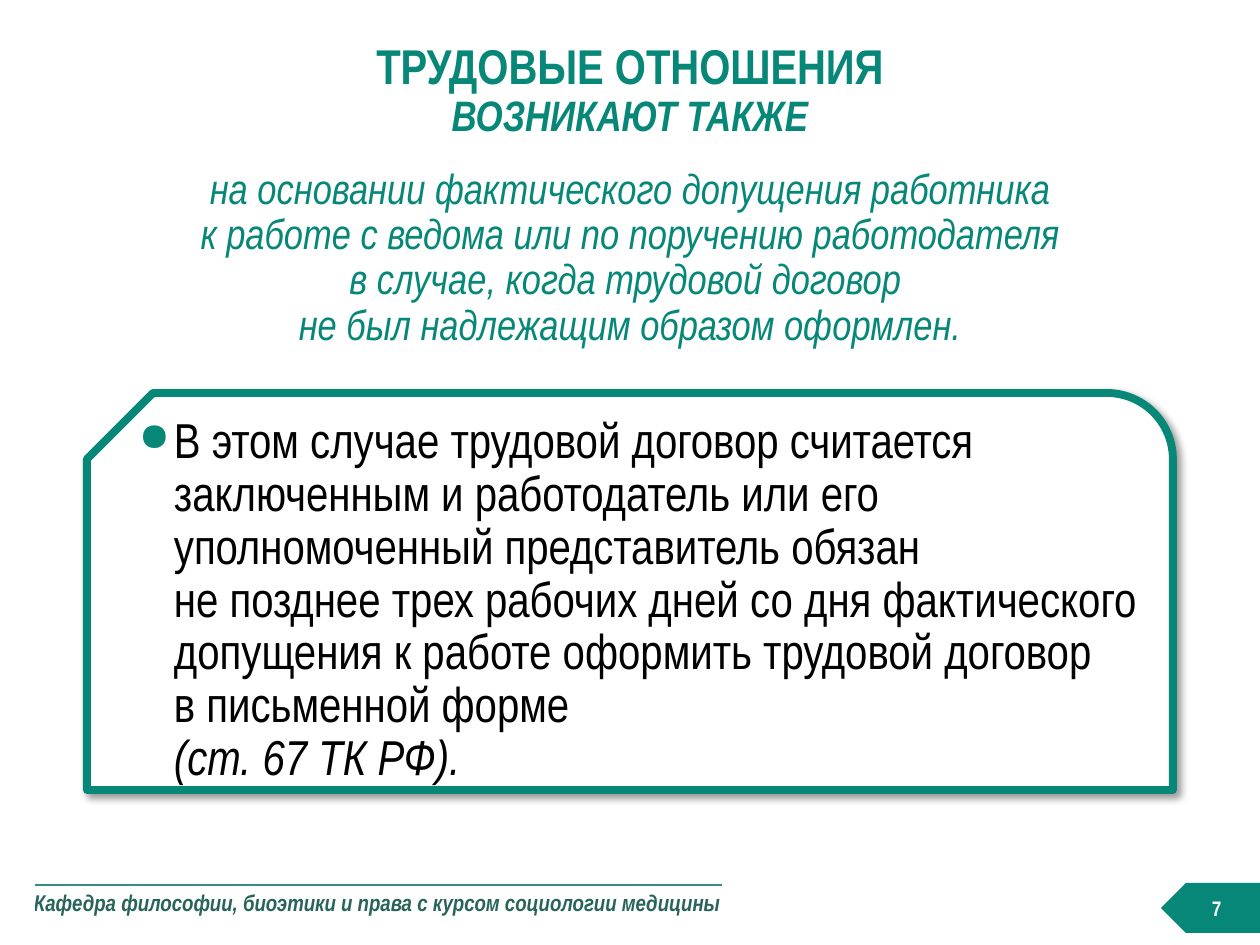
from copy import deepcopy
from dataclasses import dataclass
from typing import Optional

from lxml.etree import SubElement
from pptx import Presentation
from pptx.dml.color import RGBColor
from pptx.enum.shapes import MSO_SHAPE as Shape
from pptx.enum.text import MSO_ANCHOR as Anchor, MSO_AUTO_SIZE as AutoSize, PP_ALIGN as Align
from pptx.oxml.ns import qn
from pptx.util import Emu, Pt

FONT = "Arial Narrow"
TEAL = "078777"
WHITE = "FFFFFF"
BLACK = "000000"

Box = tuple[int, int, int, int]


@dataclass
class TextStyle:
    size: float
    color: str
    bold: bool = False
    italic: bool = False
    align: Align = Align.CENTER
    spacing: Optional[float] = 0.9


@dataclass
class Panel:
    kind: Shape
    box: Box
    text: str
    style: TextStyle
    insets: Box
    fill: str = WHITE
    anchor: Anchor = Anchor.MIDDLE
    flipped: bool = False
    outline: Optional[float] = None
    alpha: Optional[int] = None


def px(n: int) -> Emu:
    return Emu(round(n * 914400 / 126))


def rgb(value: str) -> RGBColor:
    return RGBColor.from_string(value)


def set_insets(target, insets: Box) -> None:
    sides = ("left", "top", "right", "bottom")
    for side, n in zip(sides, insets):
        setattr(target, f"margin_{side}", px(n))


def write(p, text: str, style: TextStyle) -> None:
    p.text = text
    p.alignment = style.align
    if style.spacing:
        p.line_spacing = style.spacing
    for r in p.runs:
        r.font.name = FONT
        r.font.size = Pt(style.size)
        r.font.bold = style.bold
        r.font.italic = style.italic
        r.font.color.rgb = rgb(style.color)


def match_breaks(p) -> None:
    for br in p._p.findall(qn("a:br")):
        br.append(deepcopy(br.getprevious().find(qn("a:rPr"))))


def add_bullet(p, color: str) -> None:
    pPr = p._p.get_or_add_pPr()
    pPr.set("marL", str(px(49)))
    pPr.set("indent", str(px(-35)))
    SubElement(SubElement(pPr, qn("a:buClr")), qn("a:srgbClr"), val=color)
    SubElement(pPr, qn("a:buSzPct"), val="80000")
    SubElement(pPr, qn("a:buChar"), char="●")


def add_shadow(sp) -> None:
    effects = sp._element.spPr.find(qn("a:effectLst"))
    shadow = SubElement(effects, qn("a:outerShdw"), blurRad=str(Pt(4)),
                        dist=str(Pt(3)), dir="2700000", algn="tl", rotWithShape="0")
    color = SubElement(shadow, qn("a:srgbClr"), val=BLACK)
    SubElement(color, qn("a:alpha"), val="40000")


def add_panel(s, panel: Panel):
    sp = s.shapes.add_shape(panel.kind, *map(px, panel.box))
    sp.shadow.inherit = False
    sp.fill.solid()
    sp.fill.fore_color.rgb = rgb(panel.fill)
    if panel.alpha is not None:
        color = sp._element.spPr.find(qn("a:solidFill")).find(qn("a:srgbClr"))
        SubElement(color, qn("a:alpha"), val=str(panel.alpha * 1000))
    if panel.outline:
        sp.line.color.rgb = rgb(TEAL)
        sp.line.width = Pt(panel.outline)
    else:
        sp.line.fill.background()
    if panel.flipped:
        sp._element.spPr.find(qn("a:xfrm")).set("flipH", "1")
    tf = sp.text_frame
    tf.word_wrap = True
    tf.vertical_anchor = panel.anchor
    set_insets(tf, panel.insets)
    write(tf.paragraphs[0], panel.text, panel.style)
    match_breaks(tf.paragraphs[0])
    return sp


def add_title(s) -> None:
    title = s.shapes.title
    title.left, title.top, title.width, title.height = map(px, (87, 50, 1086, 83))
    tf = title.text_frame
    tf.auto_size = AutoSize.NONE
    tf.word_wrap = True
    tf.vertical_anchor = Anchor.MIDDLE
    set_insets(tf, (0, 0, 0, 0))
    p = tf.paragraphs[0]
    write(p, "ТРУДОВЫЕ ОТНОШЕНИЯ\vВОЗНИКАЮТ ТАКЖЕ", TextStyle(27.9, TEAL, bold=True))
    p.runs[-1].font.size = Pt(24.3)
    p.runs[-1].font.italic = True
    match_breaks(p)


def add_footer(s) -> None:
    table = s.shapes.add_table(1, 1, *map(px, (34, 885, 689, 54))).table
    table.first_row = False
    table.horz_banding = False
    cell = table.cell(0, 0)
    set_insets(cell, (0, 10, 0, 0))
    write(cell.text_frame.paragraphs[0],
          "Кафедра философии, биоэтики и права с курсом социологии медицины",
          TextStyle(13, "28645A", bold=True, italic=True, align=Align.LEFT, spacing=None))
    border = SubElement(cell._tc.get_or_add_tcPr(), qn("a:lnT"), w=str(Pt(1)))
    SubElement(SubElement(border, qn("a:solidFill")), qn("a:srgbClr"), val="388E84")
    cell.fill.background()


def main() -> None:
    prs = Presentation()
    prs.slide_width, prs.slide_height = px(1260), px(945)
    s = prs.slides.add_slide(prs.slide_layouts[5])
    add_footer(s)
    add_title(s)

    duty = add_panel(s, Panel(
        Shape.SNIP_ROUND_RECTANGLE, (87, 393, 1086, 397),
        "В этом случае трудовой договор считается заключенным и работодатель "
        "или его уполномоченный представитель обязан\v"
        "не позднее трех рабочих дней со дня фактического допущения к работе "
        "оформить трудовой договор \vв письменной форме\v(ст. 67 ТК РФ).",
        TextStyle(28, BLACK, align=Align.LEFT), (5, 0, 5, 0),
        flipped=True, outline=4.5))
    p = duty.text_frame.paragraphs[0]
    add_bullet(p, "078877")
    p.runs[-1].font.italic = True
    add_shadow(duty)

    add_panel(s, Panel(
        Shape.PENTAGON, (1161, 883, 99, 50), "7",
        TextStyle(12, WHITE, bold=True, spacing=None), (13, 6, 13, 6),
        fill=TEAL, flipped=True))
    add_panel(s, Panel(
        Shape.RECTANGLE, (87, 163, 1086, 200),
        "на основании фактического допущения работника\v"
        "к работе с ведома или по поручению работодателя\v"
        "в случае, когда трудовой договор \v"
        "не был надлежащим образом оформлен.",
        TextStyle(24, TEAL, italic=True), (25, 5, 25, 5),
        anchor=Anchor.TOP, alpha=27))
    prs.save("out.pptx")


if __name__ == "__main__":
    main()
